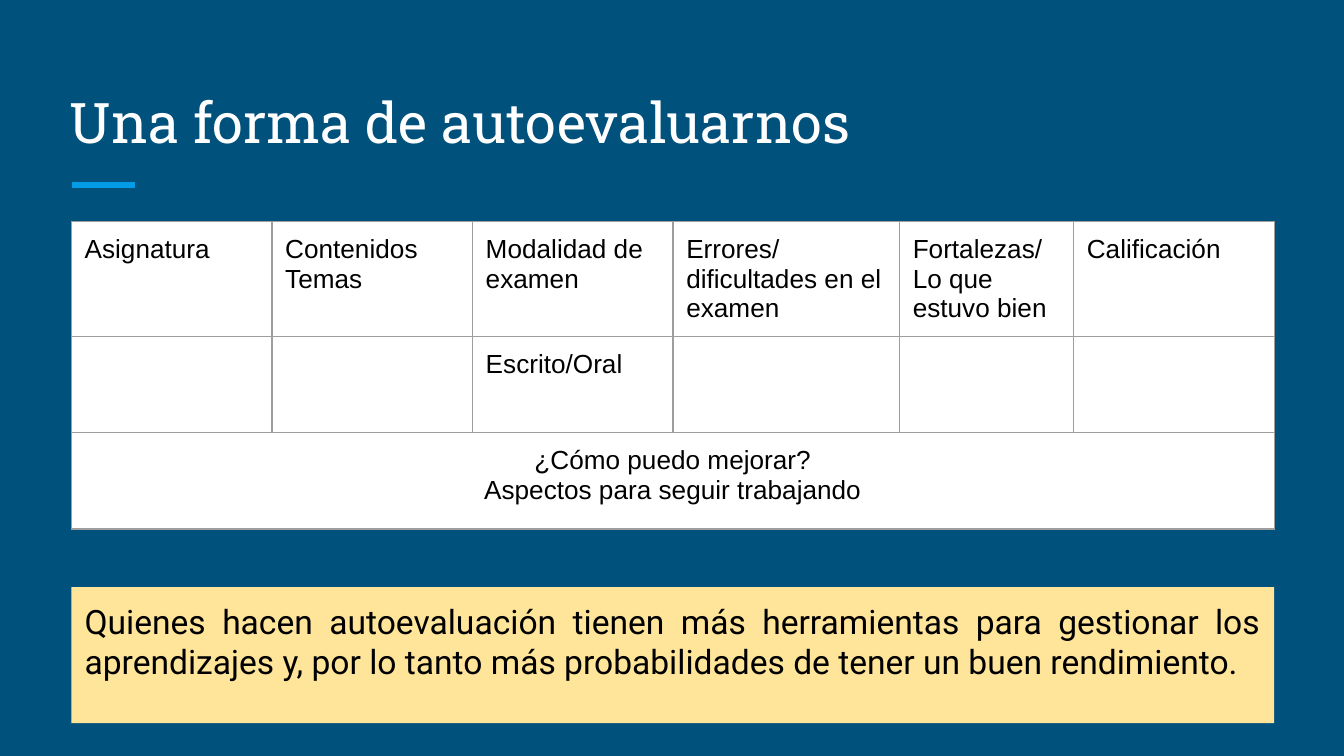
from lxml import etree
from pptx import Presentation
from pptx.dml.color import RGBColor
from pptx.enum.shapes import MSO_CONNECTOR, MSO_SHAPE
from pptx.enum.text import MSO_ANCHOR, MSO_AUTO_SIZE, PP_ALIGN
from pptx.oxml.ns import qn
from pptx.util import Cm, Pt

NAVY = RGBColor(0x00, 0x51, 0x7C)
SKY = RGBColor(0x03, 0x9B, 0xE5)
CREAM = RGBColor(0xFF, 0xE5, 0x99)
GREY = RGBColor(0x9E, 0x9E, 0x9E)
WHITE = RGBColor(0xFF, 0xFF, 0xFF)
BLACK = RGBColor(0x00, 0x00, 0x00)

LEFT, TOP, BOTTOM = MSO_ANCHOR.TOP, MSO_ANCHOR.TOP, MSO_ANCHOR.BOTTOM
ALIGN_LEFT, ALIGN_CENTER, ALIGN_JUSTIFY = PP_ALIGN.LEFT, PP_ALIGN.CENTER, PP_ALIGN.JUSTIFY
NO_AUTOFIT = MSO_AUTO_SIZE.NONE
STRAIGHT = MSO_CONNECTOR.STRAIGHT
RECTANGLE = MSO_SHAPE.RECTANGLE

INSET = Cm(0.25)
CONTENT_LEFT = Cm(1.35)
CONTENT_WIDTH = Cm(22.73)
COLUMN_WIDTHS = [3.79, 3.79, 3.79, 4.28, 3.29, 3.79]
ROW_HEIGHTS = [2.17, 1.82, 1.82]
HEADINGS = [
    "Asignatura",
    "Contenidos\nTemas",
    "Modalidad de examen",
    "Errores/dificultades en el examen",
    "Fortalezas/ Lo que estuvo bien",
    "Calificación",
]
EXAM_TYPES = ["", "", "Escrito/Oral", "", "", ""]
IMPROVEMENT = ["¿Cómo puedo mejorar?\nAspectos para seguir trabajando", "", "", "", "", ""]
CONCLUSION = (
    "Quienes hacen autoevaluación tienen más herramientas para gestionar los "
    "aprendizajes y, por lo tanto más probabilidades de tener un buen rendimiento."
)


def set_insets(box):
    box.margin_left = box.margin_right = INSET
    box.margin_top = box.margin_bottom = INSET


def write(frame, text, font_name, size, color, alignment):
    frame.text = text
    for paragraph in frame.paragraphs:
        paragraph.alignment = alignment
        for run in paragraph.runs:
            run.font.name = font_name
            run.font.size = Pt(size)
            run.font.color.rgb = color


def add_title(slide, text):
    title = slide.shapes.title
    title.left, title.top, title.width, title.height = Cm(1.07), Cm(1.27), Cm(23.24), Cm(1.9)
    frame = title.text_frame
    set_insets(frame)
    frame.word_wrap = True
    frame.auto_size = NO_AUTOFIT
    frame.vertical_anchor = BOTTOM
    write(frame, text, "Roboto Slab", 30, WHITE, ALIGN_LEFT)


def add_accent(slide):
    accent = slide.shapes.add_connector(STRAIGHT, Cm(1.36), Cm(3.5), Cm(2.55), Cm(3.5))
    accent.line.color.rgb = SKY
    accent.line.width = Pt(3)
    etree.SubElement(accent._element.spPr, qn("a:effectLst"))


def set_borders(cell):
    properties = cell._tc.get_or_add_tcPr()
    for position, side in enumerate(("lnL", "lnR", "lnT", "lnB")):
        border = etree.Element(qn(f"a:{side}"), w=str(Pt(0.75)))
        fill = etree.SubElement(border, qn("a:solidFill"))
        etree.SubElement(fill, qn("a:srgbClr"), val=str(GREY))
        properties.insert(position, border)


def format_cell(cell, text, alignment):
    set_insets(cell)
    cell.vertical_anchor = TOP
    cell.fill.solid()
    cell.fill.fore_color.rgb = WHITE
    set_borders(cell)
    if text:
        write(cell.text_frame, text, "Arial", 14, BLACK, alignment)


def add_evaluation_table(slide):
    rows = [HEADINGS, EXAM_TYPES, IMPROVEMENT]
    table = slide.shapes.add_table(
        len(rows), len(HEADINGS), CONTENT_LEFT, Cm(4.19), CONTENT_WIDTH, Cm(sum(ROW_HEIGHTS))
    ).table
    table.first_row = table.horz_banding = False
    for column, width in zip(table.columns, COLUMN_WIDTHS):
        column.width = Cm(width)
    for row, height in zip(table.rows, ROW_HEIGHTS):
        row.height = Cm(height)
    last = len(rows) - 1
    table.cell(last, 0).merge(table.cell(last, len(HEADINGS) - 1))
    for row_index, texts in enumerate(rows):
        alignment = ALIGN_CENTER if row_index == last else ALIGN_LEFT
        for column_index, text in enumerate(texts):
            format_cell(table.cell(row_index, column_index), text, alignment)


def add_conclusion(slide, text):
    panel = slide.shapes.add_shape(RECTANGLE, CONTENT_LEFT, Cm(11.1), CONTENT_WIDTH, Cm(2.57))
    panel.shadow.inherit = False
    panel.fill.solid()
    panel.fill.fore_color.rgb = CREAM
    panel.line.fill.background()
    frame = panel.text_frame
    set_insets(frame)
    frame.word_wrap = True
    frame.vertical_anchor = TOP
    write(frame, text, "Roboto", 18, BLACK, ALIGN_JUSTIFY)


def main():
    presentation = Presentation()
    presentation.slide_width = Cm(25.4)
    presentation.slide_height = Cm(14.29)
    slide = presentation.slides.add_slide(presentation.slide_layouts[5])
    slide.background.fill.solid()
    slide.background.fill.fore_color.rgb = NAVY
    add_accent(slide)
    add_title(slide, "Una forma de autoevaluarnos")
    add_evaluation_table(slide)
    add_conclusion(slide, CONCLUSION)
    presentation.save("out.pptx")


if __name__ == "__main__":
    main()
